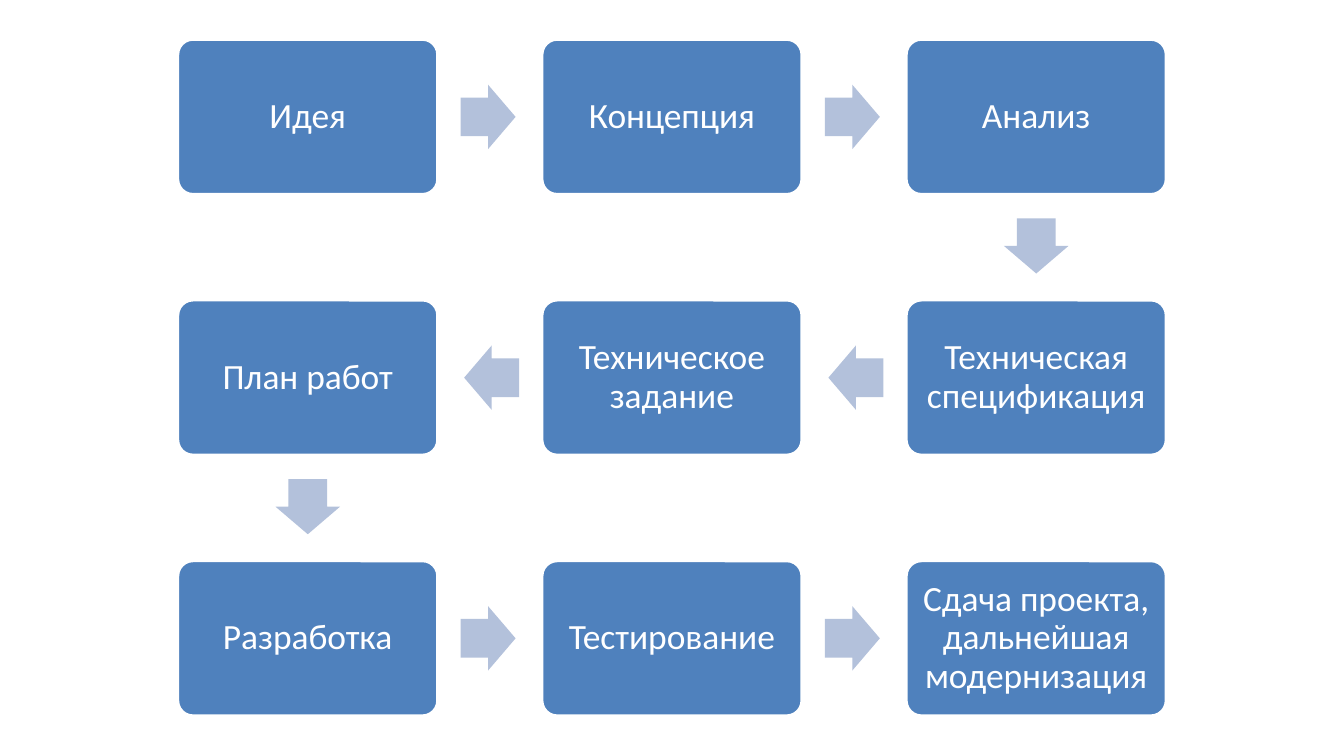
from dataclasses import dataclass

from pptx import Presentation
from pptx.dml.color import RGBColor as Rgb
from pptx.enum.shapes import MSO_SHAPE as Kind
from pptx.enum.text import MSO_ANCHOR as Anchor, PP_ALIGN as Align
from pptx.util import Inches, Pt

WIDE = 10
HIGH = WIDE * 9 / 16
COLS = 3
LEFT, TOP = 1.32, 0.29          # corner of the first box
STEP_X, STEP_Y = 2.71, 1.94     # grid pitch
BOX_W, BOX_H = 1.94, 1.16
ARROW_W, ARROW_H = 0.41, 0.48
MID = 0.99 / 2                  # arrow centre, just short of half the pitch
BLUE, PALE, WHITE = "4F81BD", "B3C1DB", "FFFFFF"

STAGES = [
    "Идея", "Концепция", "Анализ",
    "Техническая спецификация", "Техническое задание", "План работ",
    "Разработка", "Тестирование", "Сдача проекта, дальнейшая модернизация",
]
TURNS = {(1, 0): 0, (0, 1): 90, (-1, 0): 180}


@dataclass
class Cell:
    col: int
    row: int
    text: str

    @property
    def mid(self) -> tuple[float, float]:
        return (LEFT + self.col * STEP_X + BOX_W / 2,
                TOP + self.row * STEP_Y + BOX_H / 2)


def paint(part, color: str) -> None:
    part.rgb = Rgb.from_string(color)


def add_part(slide, kind, mid: tuple[float, float], size: tuple[float, float],
             color: str):
    """Add a flat filled shape centred on a point."""
    (x, y), (w, h) = mid, size
    shape = slide.shapes.add_shape(
        kind, Inches(x - w / 2), Inches(y - h / 2), Inches(w), Inches(h))
    shape.shadow.inherit = False
    shape.fill.solid()
    paint(shape.fill.fore_color, color)
    return shape


def write(shape, text: str, *, size: float = 19, color: str = WHITE,
          font: str = "Calibri", inset: float = 0.08) -> None:
    frame = shape.text_frame
    frame.word_wrap = True
    frame.vertical_anchor = Anchor.MIDDLE
    frame.margin_left = frame.margin_right = Inches(inset)
    frame.margin_top = frame.margin_bottom = Inches(inset)
    para = frame.paragraphs[0]
    para.alignment = Align.CENTER
    para.line_spacing = 0.9
    run = para.add_run()
    run.text = text
    run.font.name, run.font.size = font, Pt(size)
    paint(run.font.color, color)


def add_box(slide, cell: Cell) -> None:
    box = add_part(slide, Kind.ROUNDED_RECTANGLE, cell.mid, (BOX_W, BOX_H), BLUE)
    box.adjustments[0] = 0.1
    box.line.width = Pt(2)
    box.line.fill.solid()
    paint(box.line.fill.fore_color, WHITE)
    write(box, cell.text)


def add_arrow(slide, cell: Cell, goal: Cell) -> None:
    dx, dy = goal.col - cell.col, goal.row - cell.row
    x, y = cell.mid
    mid = x + dx * STEP_X * MID, y + dy * STEP_Y * MID
    arrow = add_part(slide, Kind.RIGHT_ARROW, mid, (ARROW_W, ARROW_H), PALE)
    arrow.adjustments[0] = 0.6
    arrow.adjustments[1] = 0.5
    arrow.line.fill.background()
    arrow.rotation = TURNS[dx, dy]


def snake(texts: list[str]) -> list[Cell]:
    """Lay stages out in rows that run right, then left, then right."""
    cells = []
    for i, text in enumerate(texts):
        row, col = divmod(i, COLS)
        cells.append(Cell(COLS - 1 - col if row % 2 else col, row, text))
    return cells


def main() -> None:
    deck = Presentation()
    deck.slide_width, deck.slide_height = Inches(WIDE), Inches(HIGH)
    slide = deck.slides.add_slide(deck.slide_layouts[6])

    # Boxes, each followed by the arrow to the next stage
    cells = snake(STAGES)
    for cell, goal in zip(cells, cells[1:] + [None]):
        add_box(slide, cell)
        if goal:
            add_arrow(slide, cell, goal)

    deck.save("out.pptx")


if __name__ == "__main__":
    main()
